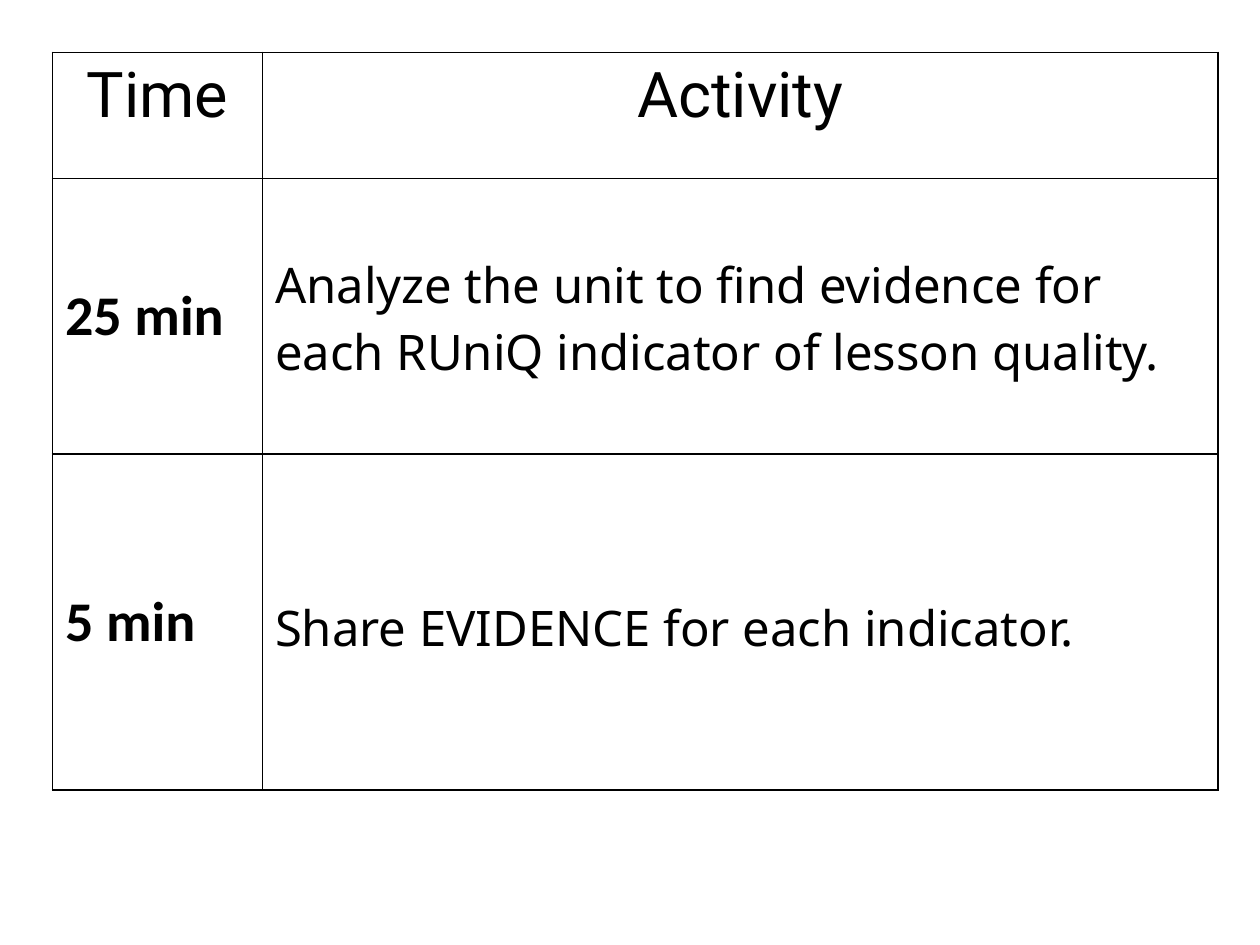
from dataclasses import dataclass

import pptx
import pptx.dml.color
import pptx.enum.text
import pptx.oxml
import pptx.oxml.ns
import pptx.util

ANCHOR = pptx.enum.text.MSO_ANCHOR
ALIGN = pptx.enum.text.PP_ALIGN


@dataclass(frozen=True)
class TextStyle:
    font: str
    size: int
    bold: bool = False
    align: ALIGN = ALIGN.LEFT
    anchor: ANCHOR = ANCHOR.TOP


@dataclass(frozen=True)
class Theme:
    ink: str = "000000"
    border_width: float = 1
    heading: TextStyle = TextStyle("Roboto", 36, align=ALIGN.CENTER)
    time: TextStyle = TextStyle("Calibri", 32, bold=True, anchor=ANCHOR.MIDDLE)
    activity: TextStyle = TextStyle("Noto Sans", 28)


class AgendaSlide:
    """Places elements on a grid of square units, 24 across the slide."""

    def __init__(self, deck, theme):
        self.theme = theme
        self.unit = deck.slide_width / 24
        self.slide = deck.slides.add_slide(deck.slide_layouts[6])

    def length(self, units):
        return pptx.util.Emu(round(units * self.unit))

    def table(self, left, top, columns, rows):
        frame = self.slide.shapes.add_table(
            len(rows), len(columns), self.length(left), self.length(top),
            self.length(sum(columns)), self.length(sum(rows)))
        table = frame.table
        table.first_row = table.horz_banding = False
        for column, width in zip(table.columns, columns):
            column.width = self.length(width)
        for row, height in zip(table.rows, rows):
            row.height = self.length(height)
        return table

    def cell(self, cell, text, style, drop=0):
        """Fill one cell; drop lowers its text by that many grid units."""
        cell.fill.background()
        cell.vertical_anchor = style.anchor
        cell.margin_top = pptx.util.Inches(0.05) + self.length(drop)
        paragraph = cell.text_frame.paragraphs[0]
        paragraph.alignment = style.align
        run = paragraph.add_run()
        run.text = text
        run.font.name = style.font
        run.font.size = pptx.util.Pt(style.size)
        run.font.bold = style.bold
        run.font.color.rgb = pptx.dml.color.RGBColor.from_string(self.theme.ink)
        self.borders(cell)

    def borders(self, cell):
        width = pptx.util.Pt(self.theme.border_width)
        namespace = pptx.oxml.ns.nsdecls("a")
        for position, side in enumerate("LRTB"):
            line = pptx.oxml.parse_xml(
                f'<a:ln{side} {namespace} w="{width}"><a:solidFill>'
                f'<a:srgbClr val="{self.theme.ink}"/></a:solidFill></a:ln{side}>')
            cell._tc.get_or_add_tcPr().insert(position, line)


def main():
    deck = pptx.Presentation()
    deck.slide_width = pptx.util.Inches(10)
    deck.slide_height = pptx.util.Inches(7.5)
    theme = Theme()
    page = AgendaSlide(deck, theme)

    agenda = page.table(1, 1, columns=(4, 18.2), rows=(2.4, 5.25, 6.4))
    for column, heading in enumerate(("Time", "Activity")):
        page.cell(agenda.cell(0, column), heading, theme.heading)

    steps = (
        ("25 min", "Analyze the unit to find evidence for each RUniQ "
                   "indicator of lesson quality."),
        ("5 min", "Share EVIDENCE for each indicator."),
    )
    activity_line = 1.27
    for row, (time, activity) in enumerate(steps, start=1):
        page.cell(agenda.cell(row, 0), time, theme.time)
        page.cell(agenda.cell(row, 1), activity, theme.activity,
                  drop=row * activity_line)

    deck.save("out.pptx")


if __name__ == "__main__":
    main()
